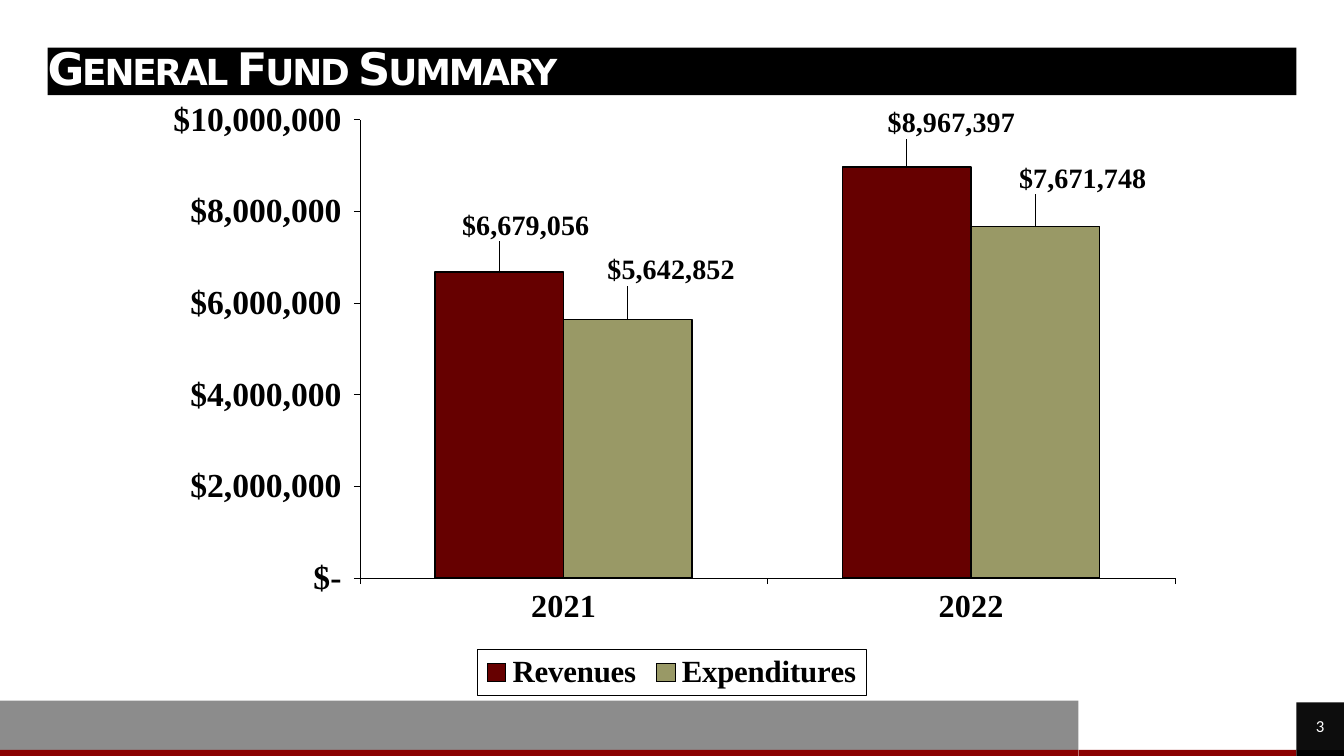
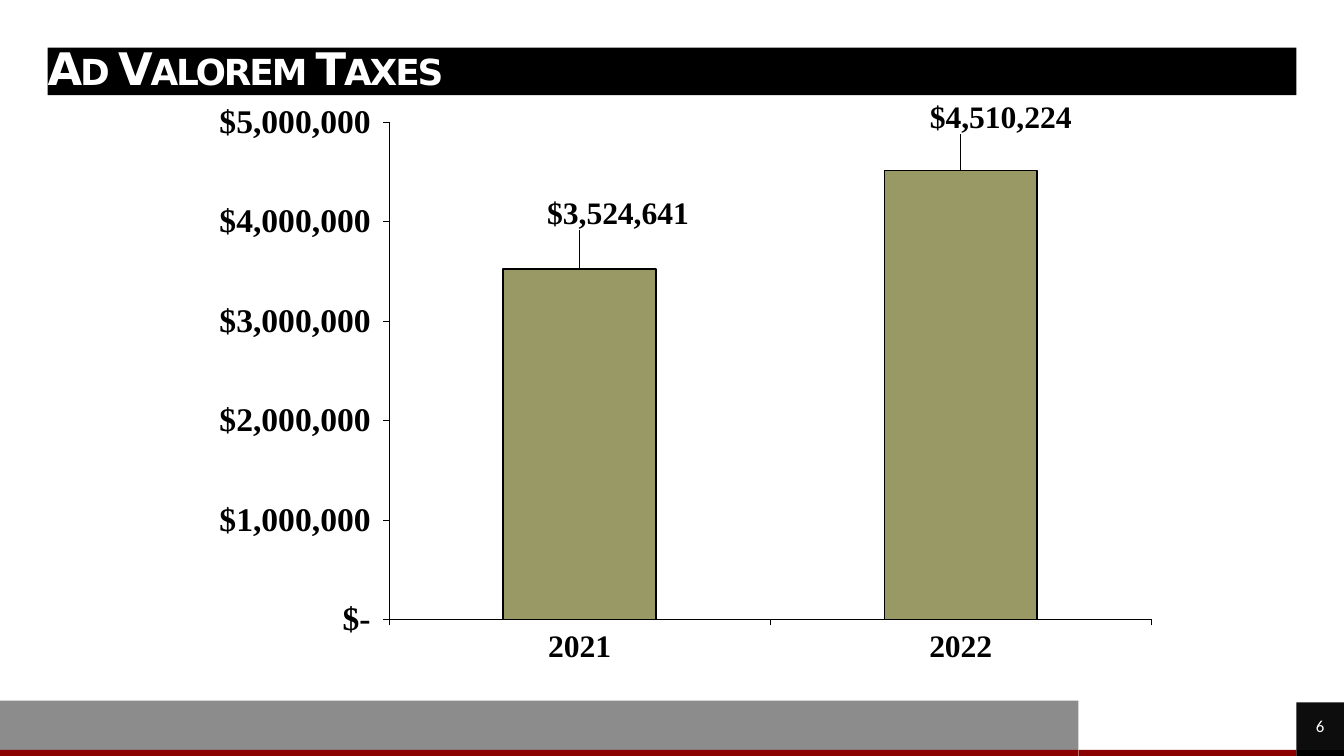
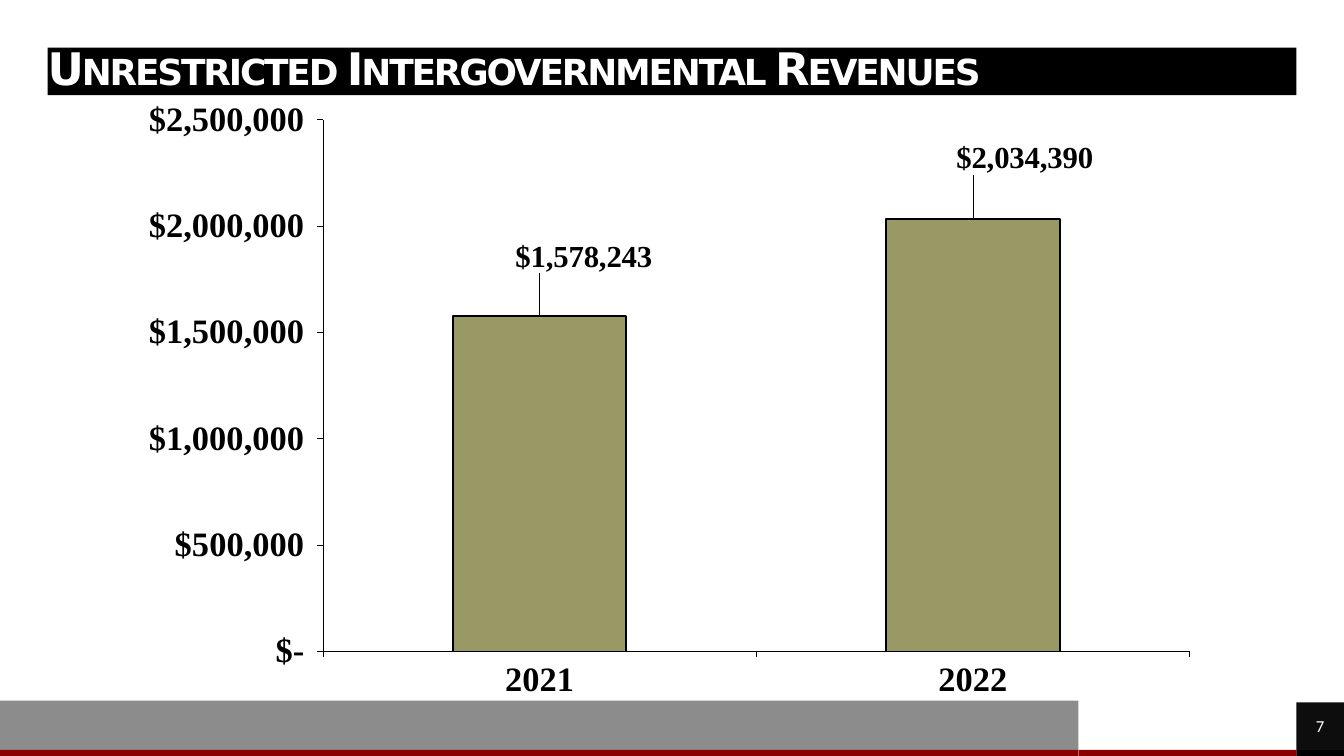
from dataclasses import dataclass
from typing import Any, Optional

from pptx import Presentation
from pptx.chart.data import CategoryChartData
from pptx.dml.color import RGBColor
from pptx.enum.chart import (XL_CHART_TYPE, XL_LABEL_POSITION, XL_LEGEND_POSITION,
                             XL_TICK_LABEL_POSITION, XL_TICK_MARK)
from pptx.enum.shapes import MSO_SHAPE
from pptx.enum.text import MSO_ANCHOR, PP_ALIGN
from pptx.oxml import parse_xml
from pptx.oxml.ns import nsdecls
from pptx.util import Pt

# Shared style
COLORS = {"black": "000000", "white": "FFFFFF", "number": "0D0D0D", "band": "8C8C8C",
          "rule": "8A0000", "maroon": "660000", "olive": "999966"}
AXIS_FORMAT = '_($* #,##0_);_($* (#,##0);_($* "-"_);_(@_)'
LABEL_FORMAT = '"$"#,##0'
YEARS = ("2021", "2022")
BAND_END, NUMBER_LEFT = 770.4, 926
RULE_TOP, RULE_HEIGHT = 535.7, 4.3


@dataclass
class Box:
    left: float
    top: float
    width: float
    height: float

    def points(self) -> tuple:
        return tuple(Pt(v) for v in (self.left, self.top, self.width, self.height))


@dataclass
class Bars:
    name: str
    color: str
    values: tuple
    shifts: tuple  # (right, up) of each label, in points


@dataclass
class FundSlide:
    title: str
    number: int
    box: Box
    plot: Box  # fractions of the chart
    top_value: int
    step: int
    gap: int
    cat_size: float
    value_size: float
    label_size: float
    axis_line: float
    bar_line: float
    bars: tuple
    legend: Optional[Box] = None  # fractions of the chart


BANDS = (
    (Box(BAND_END, RULE_TOP, NUMBER_LEFT - BAND_END, RULE_HEIGHT), "rule"),
    (Box(0, 500.4, BAND_END, RULE_TOP - 500.4), "band"),
    (Box(0, RULE_TOP, BAND_END, RULE_HEIGHT), "rule"),
    (Box(NUMBER_LEFT, RULE_TOP, 34, RULE_HEIGHT), "black"),
)

SLIDES = (
    FundSlide("General Fund Summary", 3, Box(108.7, 72, 741.6, 425.5),
              Box(0.2, 0.03, 0.785, 0.771), 10_000_000, 2_000_000, 117, 23, 24, 20, 0.31, 1.23,
              (Bars("Revenues", "maroon", (6679056, 8967397), ((19, 19), (32, 17))),
               Bars("Expenditures", "olive", (5642852, 7671748), ((31, 21), (34, 20)))),
              Box(0.313, 0.923, 0.375, 0.077)),
    FundSlide("Ad Valorem Taxes", 6, Box(128.9, 72, 702.7, 425.5),
              Box(0.212, 0.021, 0.775, 0.848), 5_000_000, 1_000_000, 150, 22.6, 24, 22.6, 0.31, 1.23,
              (Bars("Series 1", "olive", (3524641, 4510224), ((27.5, 25), (28.5, 23))),)),
    FundSlide("Unrestricted Intergovernmental Revenues", 7, Box(100.1, 72, 759.6, 452.2),
              Box(0.171, 0.022, 0.816, 0.847), 2_500_000, 500_000, 150, 24.6, 24.6, 22, 0.34, 1.38,
              (Bars("Series 1", "olive", (1578243, 2034390), ((31.5, 27.5), (37, 28.5))),)),
)


def rgb(name: str) -> RGBColor:
    return RGBColor.from_string(COLORS[name])


def assign(obj: Any, fmt: dict) -> None:
    for key, value in fmt.items():
        setattr(obj, key, value)


def set_font(font: Any, name: str, size: float, color: str, bold: bool) -> None:
    assign(font, {"name": name, "size": Pt(size), "bold": bold})
    font.color.rgb = rgb(color)


def chart_font(font: Any, size: float) -> None:
    set_font(font, "Times New Roman", size, "black", True)


def set_line(line: Any, width: float) -> None:
    line.color.rgb = rgb("black")
    line.width = Pt(width)


def add_rect(s: Any, box: Box, color: str) -> Any:
    sp = s.shapes.add_shape(MSO_SHAPE.RECTANGLE, *box.points())
    sp.shadow.inherit = False
    sp.fill.solid()
    sp.fill.fore_color.rgb = rgb(color)
    sp.line.fill.background()
    return sp


def add_text(sp: Any, text: str, font: str, size: float, bold: bool, align: Any) -> tuple:
    tf = sp.text_frame
    assign(tf, {"margin_left": 0, "margin_top": 0, "margin_right": 0, "margin_bottom": 0,
                "word_wrap": True, "vertical_anchor": MSO_ANCHOR.MIDDLE})
    p = tf.paragraphs[0]
    p.alignment = align
    r = p.add_run()
    r.text = text
    set_font(r.font, font, size, "white", bold)
    return p, r


def layout_xml(**values: Any) -> Any:
    """Manual chart layout; the keys are element names in schema order."""
    items = "".join(f'<c:{key} val="{value}"/>' for key, value in values.items())
    return parse_xml(f'<c:layout {nsdecls("c")}><c:manualLayout>{items}</c:manualLayout></c:layout>')


def box_layout(box: Box, **target: str) -> Any:
    return layout_xml(**target, xMode="edge", yMode="edge",
                      x=box.left, y=box.top, w=box.width, h=box.height)


def add_frame(s: Any, item: FundSlide) -> None:
    # Bottom bands, title and slide number
    for box, color in BANDS:
        add_rect(s, box, color)
    sp = add_rect(s, Box(34, 34, 892, 34), "black")
    p, r = add_text(sp, item.title, "DejaVu Sans", 32, True, PP_ALIGN.LEFT)
    p.line_spacing = 0.9
    r.font._element.set("spc", "-150")
    r.font._element.set("cap", "small")
    sp = add_rect(s, Box(NUMBER_LEFT, 501.8, 34, 33.9), "number")
    add_text(sp, str(item.number), "Calibri", 12, False, PP_ALIGN.CENTER)


def format_axis(axis: Any, size: float, width: float) -> None:
    assign(axis, {"has_major_gridlines": False, "major_tick_mark": XL_TICK_MARK.OUTSIDE,
                  "minor_tick_mark": XL_TICK_MARK.NONE,
                  "tick_label_position": XL_TICK_LABEL_POSITION.LOW})
    chart_font(axis.tick_labels.font, size)
    set_line(axis.format.line, width)


def format_bars(series: Any, bars: Bars, item: FundSlide) -> None:
    series.format.fill.solid()
    series.format.fill.fore_color.rgb = rgb(bars.color)
    set_line(series.format.line, item.bar_line)
    labels = series.data_labels
    assign(labels, {"show_value": True, "number_format": LABEL_FORMAT,
                    "number_format_is_linked": False, "position": XL_LABEL_POSITION.OUTSIDE_END})
    chart_font(labels.font, item.label_size)
    for i, (right, up) in enumerate(bars.shifts):
        label = series.points[i].data_label
        chart_font(label.font, item.label_size)
        label.position = XL_LABEL_POSITION.OUTSIDE_END
        d_lbl = series._element.xpath(f"c:dLbls/c:dLbl[c:idx/@val='{i}']")[0]
        d_lbl.insert(1, layout_xml(x=round(right / item.box.width, 4),
                                   y=round(-up / item.box.height, 4)))
        d_lbl.insert(2, parse_xml(f"<c:numFmt {nsdecls('c')} formatCode='{LABEL_FORMAT}' "
                                  "sourceLinked='0'/>"))


def add_legend(chart: Any, box: Box) -> None:
    chart.has_legend = True
    legend = chart.legend
    assign(legend, {"position": XL_LEGEND_POSITION.BOTTOM, "include_in_layout": False})
    chart_font(legend.font, 22)
    el = legend._element
    for old in el.xpath("c:layout"):
        el.remove(old)
    el.xpath("c:legendPos")[0].addnext(box_layout(box))
    el.xpath("c:overlay")[0].addnext(parse_xml(
        f'<c:spPr {nsdecls("c", "a")}><a:solidFill><a:srgbClr val="{COLORS["white"]}"/></a:solidFill>'
        f'<a:ln w="{Pt(0.31)}"><a:solidFill><a:srgbClr val="{COLORS["black"]}"/></a:solidFill>'
        "</a:ln></c:spPr>"))


def add_fund_chart(s: Any, item: FundSlide) -> None:
    data = CategoryChartData()
    data.categories = YEARS
    for bars in item.bars:
        data.add_series(bars.name, bars.values)
    chart = s.shapes.add_chart(XL_CHART_TYPE.COLUMN_CLUSTERED, *item.box.points(), data).chart
    assign(chart, {"has_title": False, "has_legend": False})
    chart_font(chart.font, item.cat_size)

    # Transparent background and fixed plot area
    root = chart._chartSpace
    root.xpath("c:chart")[0].addnext(parse_xml(
        f'<c:spPr {nsdecls("c", "a")}><a:noFill/><a:ln><a:noFill/></a:ln></c:spPr>'))
    area = root.xpath("c:chart/c:plotArea")[0]
    for old in area.xpath("c:layout"):
        area.remove(old)
    area.insert(0, box_layout(item.plot, layoutTarget="inner"))

    # Axes
    format_axis(chart.category_axis, item.cat_size, item.axis_line)
    axis = chart.value_axis
    format_axis(axis, item.value_size, item.axis_line)
    assign(axis, {"minimum_scale": 0, "maximum_scale": item.top_value, "major_unit": item.step})
    assign(axis.tick_labels, {"number_format": AXIS_FORMAT, "number_format_is_linked": False})

    # Bars and legend
    plot = chart.plots[0]
    assign(plot, {"gap_width": item.gap, "overlap": 0, "vary_by_categories": False})
    for series, bars in zip(plot.series, item.bars):
        format_bars(series, bars, item)
    if item.legend:
        add_legend(chart, item.legend)


def main() -> None:
    prs = Presentation()
    assign(prs, {"slide_width": Pt(960), "slide_height": Pt(540)})
    for item in SLIDES:
        s = prs.slides.add_slide(prs.slide_layouts[6])
        add_frame(s, item)
        add_fund_chart(s, item)
    prs.save("out.pptx")


if __name__ == "__main__":
    main()
